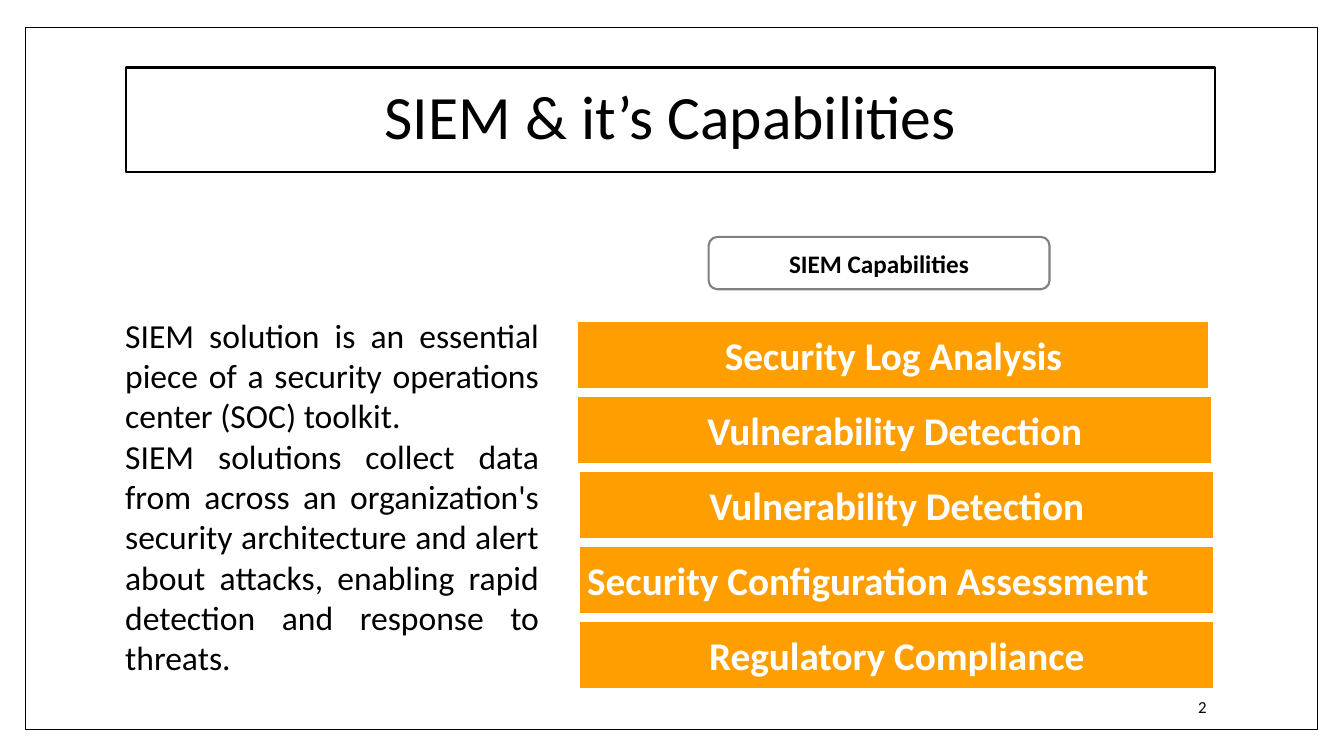
from dataclasses import dataclass

from lxml.etree import SubElement
from pptx import Presentation
from pptx.dml.color import RGBColor
from pptx.enum.shapes import MSO_SHAPE
from pptx.enum.text import MSO_ANCHOR, MSO_AUTO_SIZE, PP_ALIGN
from pptx.oxml.ns import qn
from pptx.shapes.autoshape import Shape
from pptx.slide import Slide
from pptx.text.text import _Paragraph as Paragraph
from pptx.util import Cm, Pt

COLOURS = {"black": "000000", "white": "FFFFFF", "orange": "FE9E00", "grey": "818183"}
FONT = "Calibri"
BAR_TOP, BAR_PITCH, BAR_HEIGHT = 8.03, 1.89, 1.83


@dataclass
class Capability:
    text: str
    left: float = 14.55
    width: float = 16.1
    align: PP_ALIGN = PP_ALIGN.CENTER


CAPABILITIES = [
    Capability("Security Log Analysis", left=14.5, width=16.03),
    Capability("Vulnerability Detection", left=14.5),
    Capability("Vulnerability Detection"),
    Capability("Security Configuration Assessment", align=PP_ALIGN.LEFT),
    Capability("Regulatory Compliance"),
]
DESCRIPTION = [
    "SIEM solution is an essential piece of a security operations center (SOC) toolkit.",
    "SIEM solutions collect data from across an organization's security architecture "
    "and alert about attacks, enabling rapid detection and response to threats.",
]


def colour(name: str) -> RGBColor:
    return RGBColor.from_string(COLOURS[name])


def place(box: Shape, left: float, top: float, width: float, height: float) -> None:
    box.left, box.top, box.width, box.height = Cm(left), Cm(top), Cm(width), Cm(height)


def paint(box: Shape, fill: str, line: str, line_width: float) -> None:
    box.fill.solid()
    box.fill.fore_color.rgb = colour(fill)
    box.line.color.rgb = colour(line)
    box.line.width = Pt(line_width)


def add_box(page: Slide, kind: MSO_SHAPE, left: float, top: float, width: float,
            height: float, fill: str, line: str, line_width: float) -> Shape:
    box = page.shapes.add_shape(kind, Cm(left), Cm(top), Cm(width), Cm(height))
    box.shadow.inherit = False
    paint(box, fill, line, line_width)
    return box


def write(para: Paragraph, text: str, size: float, ink: str = "black",
          align: PP_ALIGN = PP_ALIGN.CENTER, bold: bool = False) -> None:
    para.alignment = align
    span = para.add_run()
    span.text = text
    span.font.name = FONT
    span.font.size = Pt(size)
    span.font.bold = bold
    span.font.color.rgb = colour(ink)


def set_frame(box: Shape, anchor: MSO_ANCHOR = MSO_ANCHOR.MIDDLE) -> None:
    box.text_frame.word_wrap = True
    box.text_frame.auto_size = MSO_AUTO_SIZE.NONE
    box.text_frame.vertical_anchor = anchor


def add_title(page: Slide) -> None:
    title = page.shapes.title
    place(title, 3.18, 1.7, 27.43, 2.64)
    paint(title, "white", "black", 1.5)
    set_frame(title)
    para = title.text_frame.paragraphs[0]
    para.line_spacing = 0.9
    write(para, "SIEM & it’s Capabilities", 44)


def add_description(page: Slide) -> None:
    body = page.placeholders[1]
    place(body, 2.77, 7.8, 11.07, 9.5)
    set_frame(body, MSO_ANCHOR.TOP)
    for index, text in enumerate(DESCRIPTION):
        para = body.text_frame.paragraphs[0] if index == 0 else body.text_frame.add_paragraph()
        para.space_before = Pt(0)
        write(para, text, 24, align=PP_ALIGN.JUSTIFY)
        # Small indent without a bullet
        properties = para._p.get_or_add_pPr()
        properties.set("marL", str(Cm(0.13)))
        properties.set("indent", "0")
        SubElement(properties, qn("a:buNone"))


def add_capabilities(page: Slide) -> None:
    for index, item in enumerate(CAPABILITIES):
        bar = add_box(page, MSO_SHAPE.RECTANGLE, item.left, BAR_TOP + index * BAR_PITCH,
                      item.width, BAR_HEIGHT, "orange", "white", 4.25)
        set_frame(bar)
        write(bar.text_frame.paragraphs[0], item.text, 28, "white", item.align, bold=True)


def main() -> None:
    deck = Presentation()
    deck.slide_width, deck.slide_height = Cm(33.87), Cm(19.05)
    page = deck.slides.add_slide(deck.slide_layouts[1])

    # Page border, behind everything else
    border = add_box(page, MSO_SHAPE.RECTANGLE, 0.64, 0.69, 32.56, 17.7, "white", "black", 1)
    page.shapes.title.element.addprevious(border.element)

    # Title and description
    add_title(page)
    add_description(page)

    # Capabilities with their heading
    add_capabilities(page)
    heading = add_box(page, MSO_SHAPE.ROUNDED_RECTANGLE, 17.86, 5.97, 8.59, 1.32,
                      "white", "grey", 1.5)
    set_frame(heading)
    write(heading.text_frame.paragraphs[0], "SIEM Capabilities", 18, bold=True)

    # Page number
    number = page.shapes.add_textbox(Cm(25.91), Cm(17.3), Cm(4.75), Cm(1.02))
    set_frame(number)
    write(number.text_frame.paragraphs[0], "2", 12, align=PP_ALIGN.RIGHT)

    deck.save("out.pptx")


if __name__ == "__main__":
    main()
